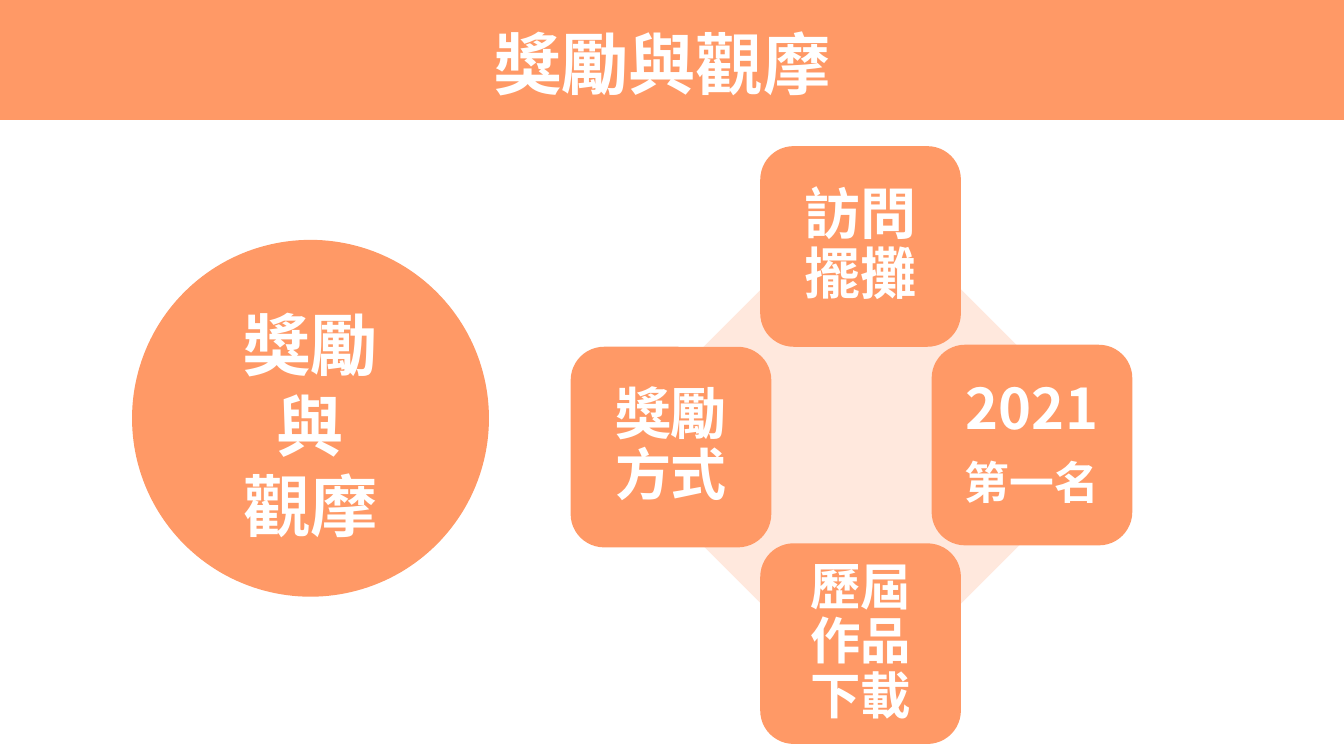
from lxml.etree import SubElement
from pptx import Presentation
from pptx.dml.color import RGBColor
from pptx.enum.shapes import MSO_SHAPE
from pptx.enum.text import MSO_ANCHOR, PP_ALIGN
from pptx.oxml.ns import qn
from pptx.util import Inches, Pt

FONT = "Noto Sans CJK SC"
ORANGE = "FF9966"
PEACH = "FFE3D5"
WHITE = "FFFFFF"
TILE_SIZE = 1.99
TILE_INSET = 0.16
TILES = [
    (5.66, 3.44, [("獎勵方式", 40)]),
    (7.54, 1.45, [("訪問擺攤", 40)]),
    (9.24, 3.42, [("2021", 40), ("第一名", 32)]),
    (7.54, 5.39, [("歷屆作品下載", 36)]),
]


def color(value):
    return RGBColor.from_string(value)


def add_filled_shape(page, kind, left, top, width, height, fill, opacity=100):
    shape = page.shapes.add_shape(
        kind, Inches(left), Inches(top), Inches(width), Inches(height))
    shape.shadow.inherit = False
    shape.line.fill.background()
    shape.fill.solid()
    shape.fill.fore_color.rgb = color(fill)
    if opacity < 100:
        tint = shape.element.spPr.find(qn("a:solidFill"))[0]
        SubElement(tint, qn("a:alpha"), val=str(opacity * 1000))
    return shape


def write_text(frame, lines, anchor=MSO_ANCHOR.TOP, inset=None,
               line_spacing=1.0, space_after=0):
    frame.word_wrap = True
    frame.vertical_anchor = anchor
    if inset is not None:
        frame.margin_left = frame.margin_right = Inches(inset)
        frame.margin_top = frame.margin_bottom = Inches(inset)
    for index, (text, size) in enumerate(lines):
        para = frame.paragraphs[0] if index == 0 else frame.add_paragraph()
        para.alignment = PP_ALIGN.CENTER
        para.line_spacing = line_spacing
        para.space_before = Pt(0)
        para.space_after = Pt(size * space_after)
        span = para.add_run()
        span.text = text
        span.font.size = Pt(size)
        span.font.bold = True
        span.font.color.rgb = color(WHITE)
        span.font.name = FONT
        SubElement(span.font._element, qn("a:ea"), typeface=FONT)


def add_title(page, text):
    add_filled_shape(page, MSO_SHAPE.RECTANGLE, 0, 0, 13.33, 1.19, ORANGE)
    title = page.shapes.title
    title.left, title.top = Inches(-0.19), Inches(0.17)
    title.width, title.height = Inches(13.52), Inches(0.91)
    write_text(title.text_frame, [(text, 48)])
    title.element.getparent().append(title.element)


def add_circle(page, lines):
    add_filled_shape(page, MSO_SHAPE.OVAL, 1.31, 2.38, 3.54, 3.54, ORANGE)
    box = page.shapes.add_textbox(
        Inches(1.72), Inches(2.96), Inches(2.72), Inches(2.52))
    write_text(box.text_frame, [(line, 48) for line in lines])


def add_tile(page, left, top, lines):
    tile = add_filled_shape(page, MSO_SHAPE.ROUNDED_RECTANGLE,
                            left, top, TILE_SIZE, TILE_SIZE, ORANGE)
    write_text(tile.text_frame, lines, anchor=MSO_ANCHOR.MIDDLE,
               inset=TILE_INSET, line_spacing=0.9, space_after=0.35)


def main():
    deck = Presentation()
    deck.slide_width, deck.slide_height = Inches(13.33), Inches(7.5)
    page = deck.slides.add_slide(deck.slide_layouts[5])
    add_circle(page, ["獎勵", "與", "觀摩"])
    add_filled_shape(page, MSO_SHAPE.DIAMOND, 5.99, 1.88, 5.1, 5.1, PEACH, opacity=80)
    for left, top, lines in TILES:
        add_tile(page, left, top, lines)
    add_title(page, "獎勵與觀摩")
    deck.save("out.pptx")


if __name__ == "__main__":
    main()
